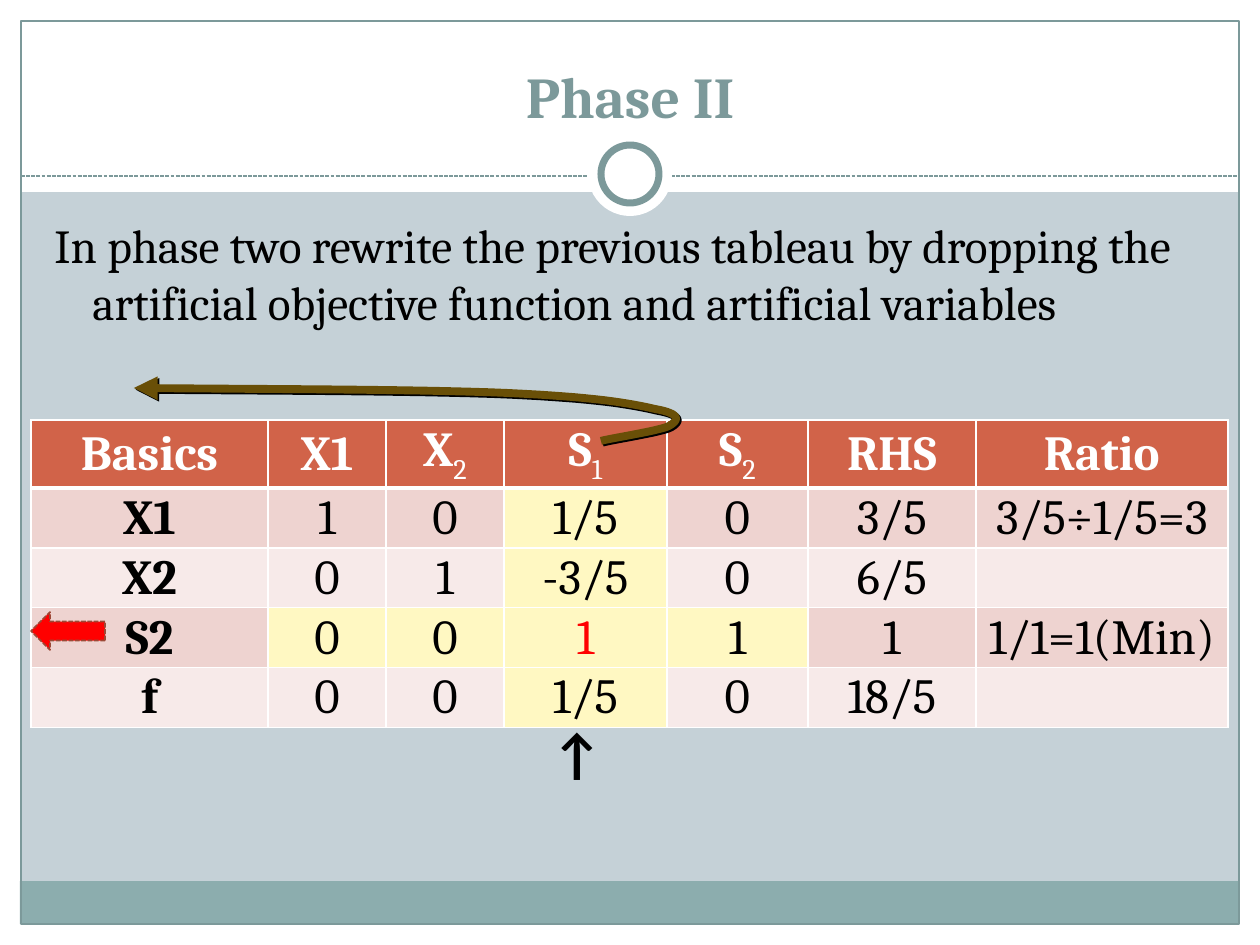
from lxml import etree
from pptx import Presentation
from pptx import util as u
from pptx.dml.color import RGBColor
from pptx.enum import dml, shapes, text
from pptx.oxml import ns

SCALE = 914400 / 126  # EMU per px
COLORS = {
    "white": "FFFFFF", "black": "000000", "red": "FF0000",
    "background": "C5D1D7", "footer": "8CADAE", "frame": "7C999A",
    "header": "D16349", "band_dark": "EED3D0", "band_light": "F7EAE9",
    "highlight": "FFF8C2", "curve": "694F07", "arrow_edge": "9B4936",
}
HEADINGS = ["Basics", "X1", "X_2", "S_1", "S_2", "RHS", "Ratio"]
ROWS = [
    ["X1", "1", "0", "1/5", "0", "3/5", "3/5÷1/5=3"],
    ["X2", "0", "1", "-3/5", "0", "6/5", ""],
    ["S2", "0", "0", "1", "1", "1", "1/1=1(Min)"],
    ["f", "0", "0", "1/5", "0", "18/5", ""],
]
COLUMN_WIDTHS = [237, 118, 118, 163, 141, 168, 252]
ROW_HEIGHT = 52
PIVOT_ROW, PIVOT_COLUMN = 3, 3
CURVE_START = (601, 441)
CURVE_SEGMENTS = [  # two control points and an end point each
    [(612, 438), (659, 431), (669, 426)],
    [(678, 421), (683, 414), (655, 409)],
    [(629, 403), (595, 397), (507, 393)],
    [(420, 389), (212, 389), (134, 388)],
]


def px(value):
    return u.Emu(round(value * SCALE))


def box(*lengths):
    return [px(length) for length in lengths]


def rgb(name):
    return RGBColor.from_string(COLORS[name])


def add_xml(parent, tag, **attributes):
    element = etree.SubElement(parent, ns.qn(tag))
    for name, value in attributes.items():
        element.set(name, str(value))
    return element


def style_line(line, color, width, dash=None):
    if color is None:
        line.fill.background()
        return
    line.color.rgb = rgb(color)
    line.width = u.Pt(width)
    if dash:
        line.dash_style = dash


def add_shape(slide, kind, bounds, fill=None, line=None, width=0.75, dash=None):
    shape = slide.shapes.add_shape(kind, *box(*bounds))
    shape.shadow.inherit = False
    if fill:
        shape.fill.solid()
        shape.fill.fore_color.rgb = rgb(fill)
    else:
        shape.fill.background()
    style_line(shape.line, line, width, dash)
    return shape


def add_run(paragraph, content, size, color, bold=False, font="Cambria"):
    run = paragraph.add_run()
    run.text = content
    values = {"size": u.Pt(size), "bold": bold, "name": font}
    for name, value in values.items():
        setattr(run.font, name, value)
    run.font.color.rgb = rgb(color)
    return run


def add_text(slide, bounds, content, anchor, size, color, bold=False):
    frame = slide.shapes.add_textbox(*box(*bounds)).text_frame
    frame.word_wrap = True
    frame.vertical_anchor = anchor
    paragraph = frame.paragraphs[0]
    add_run(paragraph, content, size, color, bold)
    return paragraph


def set_borders(cell, color, **widths):
    properties = cell._tc.get_or_add_tcPr()
    for side in "LRTB":
        width = u.Pt(widths.get(side, 1))
        line = add_xml(properties, f"a:ln{side}", w=int(width))
        if color:
            fill = add_xml(line, "a:solidFill")
            add_xml(fill, "a:srgbClr", val=COLORS[color])
        else:
            add_xml(line, "a:noFill")


def format_cell(cell, anchor, margin):
    values = {"vertical_anchor": anchor, "margin_left": px(margin),
              "margin_right": px(margin), "margin_top": px(margin),
              "margin_bottom": 0}
    for name, value in values.items():
        setattr(cell, name, value)
    paragraph = cell.text_frame.paragraphs[0]
    paragraph.alignment = text.PP_ALIGN.CENTER
    return paragraph


def cell_fill(row, column):
    if row == 0:
        return "header"
    if column == PIVOT_COLUMN or (row == PIVOT_ROW and 1 <= column <= 4):
        return "highlight"
    return "band_dark" if row % 2 else "band_light"


def cell_color(row, column):
    if row == 0:
        return "white"
    return "red" if (row, column) == (PIVOT_ROW, PIVOT_COLUMN) else "black"


def add_tableau(slide):
    rows = [HEADINGS] + ROWS
    bounds = box(31, 420, sum(COLUMN_WIDTHS), ROW_HEIGHT * len(rows))
    table = slide.shapes.add_table(len(rows), len(HEADINGS), *bounds).table
    for column, width in zip(table.columns, COLUMN_WIDTHS):
        column.width = px(width)
    for r, values in enumerate(rows):
        for c, value in enumerate(values):
            cell = table.cell(r, c)
            # The rule under the header is shared by the first two rows
            set_borders(cell, "white", T=3 if r == 1 else 1, B=3 if r == 0 else 1)
            cell.fill.solid()
            cell.fill.fore_color.rgb = rgb(cell_fill(r, c))
            paragraph = format_cell(cell, text.MSO_ANCHOR.MIDDLE, 1)
            base, _, subscript = value.partition("_")
            if base:
                add_run(paragraph, base, 28, cell_color(r, c), r == 0 or c == 0)
            if subscript:
                run = add_run(paragraph, subscript, 28, cell_color(r, c))
                run.font._element.set("baseline", "-25000")


def add_entering_marker(slide):
    table = slide.shapes.add_table(1, 1, *box(535, 721, 84, 48)).table
    table.first_row = table.horz_banding = False
    cell = table.cell(0, 0)
    set_borders(cell, None)
    cell.fill.background()
    paragraph = format_cell(cell, text.MSO_ANCHOR.BOTTOM, 0)
    add_run(paragraph, "↑", 32, "black", True, "Calibri")


def curve_points(steps=16):
    points, start = [], CURVE_START
    for first, second, end in CURVE_SEGMENTS:
        for step in range(1, steps + 1):
            t = step / steps
            weights = ((1 - t) ** 3, 3 * t * (1 - t) ** 2, 3 * t * t * (1 - t), t ** 3)
            corners = (start, first, second, end)
            points.append(tuple(sum(w * p[axis] for w, p in zip(weights, corners)) * SCALE
                                for axis in (0, 1)))
        start = end
    return points


def add_curved_arrow(slide):
    builder = slide.shapes.build_freeform(*box(*CURVE_START))
    builder.add_line_segments(curve_points(), close=False)
    shape = builder.convert_to_shape()
    shape.fill.background()
    style_line(shape.line, "curve", 4.5)
    add_xml(shape.line._get_or_add_ln(), "a:tailEnd", type="triangle")
    effects = add_xml(shape._element.spPr, "a:effectLst")
    shadow = add_xml(effects, "a:outerShdw", blurRad=0, dist=int(u.Pt(1.4)), dir=45 * 60000)
    add_xml(shadow, "a:srgbClr", val=COLORS["black"])


def add_frame(slide):
    kinds = shapes.MSO_SHAPE
    # White margins
    for bounds in [(0, 924, 1260, 21), (0, 0, 1260, 192), (0, 0, 21, 945), (1239, 0, 21, 945)]:
        add_shape(slide, kinds.RECTANGLE, bounds, "white")
    # Footer band and outline
    add_shape(slide, kinds.RECTANGLE, (20, 881, 1218, 43), "footer")
    add_shape(slide, kinds.RECTANGLE, (21, 21, 1218, 903), line="frame")
    # Dashed rule with ring
    rule = slide.shapes.add_connector(shapes.MSO_CONNECTOR.STRAIGHT, *box(21, 176, 1239, 176))
    style_line(rule.line, "frame", 0.75, dml.MSO_LINE.SQUARE_DOT)
    add_xml(rule._element.spPr, "a:effectLst")
    add_shape(slide, kinds.OVAL, (588, 132, 84, 84), "white")
    add_shape(slide, kinds.OVAL, (601, 145, 58, 58), "white", "frame", 4)


def main():
    presentation = Presentation()
    presentation.slide_width, presentation.slide_height = box(1260, 945)
    slide = presentation.slides.add_slide(presentation.slide_layouts[6])
    slide.background.fill.solid()
    slide.background.fill.fore_color.rgb = rgb("background")
    add_frame(slide)

    # Title and introduction
    title = add_text(slide, (42, 31, 1176, 105), "Phase II",
                     text.MSO_ANCHOR.BOTTOM, 33, "frame", True)
    title.alignment = text.PP_ALIGN.CENTER
    body = add_text(slide, (42, 210, 1172, 209),
                    "In phase two rewrite the previous tableau by dropping the "
                    "artificial objective function and artificial variables",
                    text.MSO_ANCHOR.TOP, 27, "black")
    body.space_before = u.Pt(5)
    properties = body._p.get_or_add_pPr()
    properties.set("marL", str(px(38)))
    properties.set("indent", str(-px(38)))

    # Simplex tableau with its markers
    add_tableau(slide)
    add_curved_arrow(slide)
    add_entering_marker(slide)
    leaving = add_shape(slide, shapes.MSO_SHAPE.RIGHT_ARROW, (31, 612, 74, 38), "red",
                        "arrow_edge", 0.9, dml.MSO_LINE.SQUARE_DOT)
    leaving.rotation = 180
    presentation.save("out.pptx")


if __name__ == "__main__":
    main()
